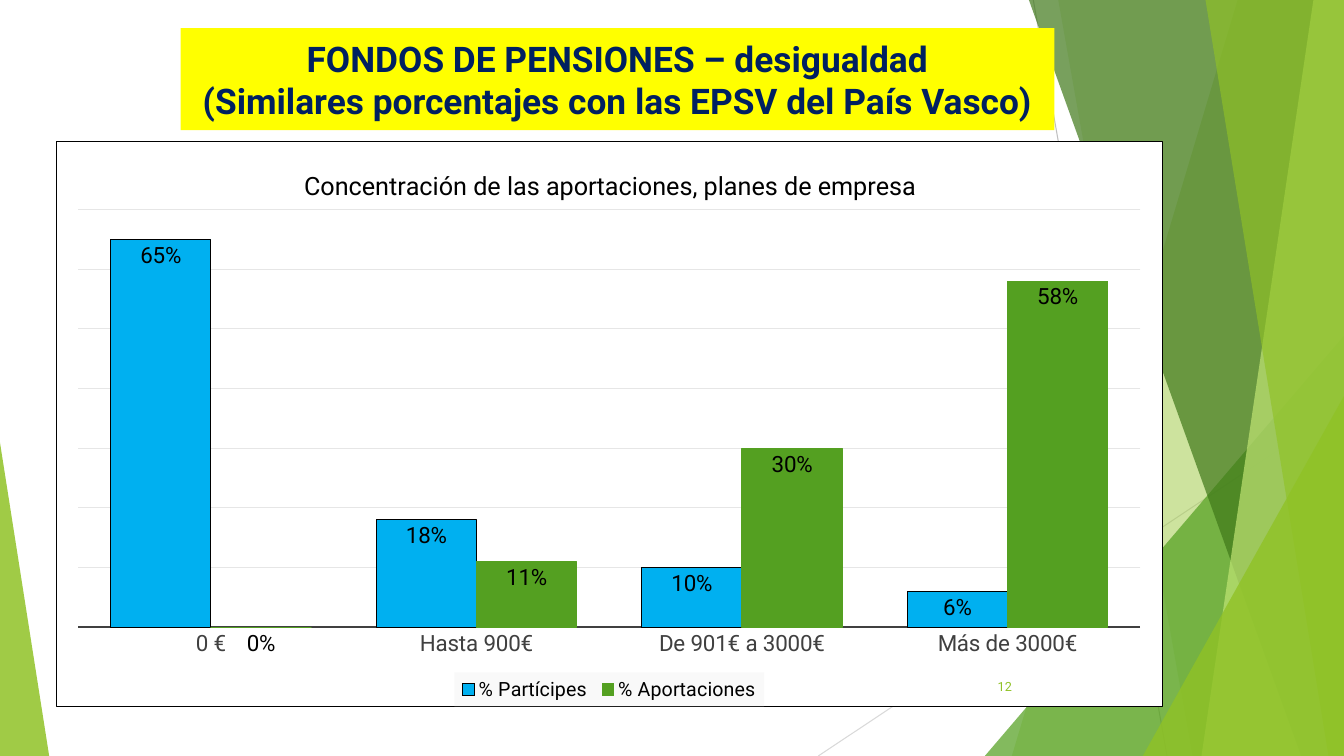
from lxml import etree
from pptx import Presentation
from pptx.chart.data import CategoryChartData
from pptx.dml.color import RGBColor
from pptx.enum.chart import (XL_CHART_TYPE as ChartType, XL_LABEL_POSITION as LabelPosition,
                             XL_LEGEND_POSITION as LegendPosition, XL_TICK_LABEL_POSITION as TickLabels,
                             XL_TICK_MARK as TickMark)
from pptx.enum.shapes import MSO_CONNECTOR as Connector, MSO_SHAPE as Shape
from pptx.enum.text import MSO_ANCHOR as Anchor, PP_ALIGN as Align
from pptx.oxml import parse_xml
from pptx.oxml.ns import nsdecls, qn
from pptx.util import Cm, Pt

WIDTH, HEIGHT = 33.87, 19.05
FONT = "Roboto"
COLORS = {
    "lime": "90C226", "green": "54A021", "forest": "3F7819", "pale": "C0E474",
    "blue": "00B0F0", "navy": "002060", "yellow": "FFFF00", "white": "FFFFFF",
    "black": "000000", "text": "404040", "grid": "E6E6E6", "legend": "F9F9F9",
    "line": "BFBFBF", "light line": "D9D9D9",
}


def rgb(name):
    return RGBColor.from_string(COLORS[name])


def format_font(font, size, color="black", bold=False):
    font.name, font.size, font.bold = FONT, Pt(size), bold
    font.color.rgb = rgb(color)


def write(shape, text, align=Align.LEFT, **font_format):
    frame = shape.text_frame
    frame.word_wrap = True
    frame.vertical_anchor = Anchor.MIDDLE
    para = frame.paragraphs[0]
    para.text = text
    para.alignment = align
    for span in para.runs:
        format_font(span.font, **font_format)


def format_line(line, color, width=0.75):
    line.color.rgb = rgb(color)
    line.width = Pt(width)


def place_chart_part(parent, index, **fractions):
    """Give a chart part a manual layout, in fractions of the chart's size."""
    for old in parent.findall(qn("c:layout")):
        parent.remove(old)
    layout = parse_xml(f"<c:layout {nsdecls('c')}><c:manualLayout/></c:layout>")
    manual = layout[0]
    if index == 0:
        etree.SubElement(manual, qn("c:layoutTarget"), val="inner")
    for axis in "xy":
        etree.SubElement(manual, qn(f"c:{axis}Mode"), val="edge")
    for key, value in fractions.items():
        etree.SubElement(manual, qn(f"c:{key}"), val=str(value))
    parent.insert(index, layout)


def chart_part_fill(fill, border=None):
    """Return the fill and border element of a chart part."""
    line = (f'<a:ln w="{Pt(0.75)}"><a:solidFill><a:srgbClr val="{COLORS[border]}"/></a:solidFill></a:ln>'
            if border else "<a:ln><a:noFill/></a:ln>")
    return parse_xml(f'<c:spPr {nsdecls("c", "a")}><a:solidFill><a:srgbClr val="{COLORS[fill]}"/>'
                     f"</a:solidFill>{line}</c:spPr>")


class SlideBuilder:
    def __init__(self, deck):
        self.page = deck.slides.add_slide(deck.slide_layouts[5])
        self.shapes = self.page.shapes

    def line(self, start, end, color):
        connector = self.shapes.add_connector(
            Connector.STRAIGHT, *(Cm(value) for value in (*start, *end)))
        format_line(connector.line, color)
        etree.SubElement(connector._element.spPr, qn("a:effectLst"))

    def fill_glass(self, shape, color, opacity):
        shape.shadow.inherit = False
        shape.line.fill.background()
        shape.fill.solid()
        shape.fill.fore_color.rgb = rgb(color)
        node = shape._element.spPr.find(f"{qn('a:solidFill')}/{qn('a:srgbClr')}")
        etree.SubElement(node, qn("a:alpha"), val=str(opacity * 1000))

    def facet(self, top, bottom, color, opacity):
        """Draw a full-height pane from a slanted left edge to the slide's right edge."""
        builder = self.shapes.build_freeform(Cm(top), 0)
        corners = ((WIDTH, 0), (WIDTH, HEIGHT), (bottom, HEIGHT))
        builder.add_line_segments([(Cm(x), Cm(y)) for x, y in corners], close=True)
        self.fill_glass(builder.convert_to_shape(), color, opacity)

    def corner(self, left, top, width, apex, color, opacity):
        """Draw a right triangle that stands on the slide's bottom edge."""
        triangle = self.shapes.add_shape(Shape.ISOSCELES_TRIANGLE, Cm(left), Cm(top),
                                         Cm(width), Cm(HEIGHT - top))
        triangle.adjustments[0] = apex
        self.fill_glass(triangle, color, opacity)

    def title(self, text, left, top, width, height):
        title = self.shapes.title
        title.left, title.top, title.width, title.height = map(Cm, (left, top, width, height))
        title.fill.solid()
        title.fill.fore_color.rgb = rgb("yellow")
        write(title, text, Align.CENTER, size=25.2, color="navy", bold=True)
        self.shapes._spTree.append(title._element)

    def text(self, text, left, top, width, height, **text_format):
        box = self.shapes.add_textbox(Cm(left), Cm(top), Cm(width), Cm(height))
        write(box, text, **text_format)

    def column_chart(self, heading, categories, series, left, top, width, height):
        """Draw clustered columns; series holds name, values, fill and line colour."""
        data = CategoryChartData(number_format="0%")
        data.categories = categories
        for name, values, _, _ in series:
            data.add_series(name, values)
        chart = self.shapes.add_chart(ChartType.COLUMN_CLUSTERED, Cm(left), Cm(top),
                                      Cm(width), Cm(height), data).chart
        format_font(chart.font, 10)
        chart._chartSpace.chart.addnext(chart_part_fill("white", "black"))

        chart.has_title = True
        para = chart.chart_title.text_frame.paragraphs[0]
        span = para.add_run()
        span.text = heading
        format_font(span.font, 18)
        place_chart_part(chart.chart_title._element, 1, x=0.22, y=0.04)

        plot = chart.plots[0]
        plot.gap_width, plot.overlap, plot.vary_by_categories = 65, 0, False
        for column, (_, _, fill, line) in zip(plot.series, series):
            column.invert_if_negative = False
            column.format.fill.solid()
            column.format.fill.fore_color.rgb = rgb(fill)
            format_line(column.format.line, line)
            labels = column.data_labels
            labels.show_value = True
            labels.position = LabelPosition.INSIDE_END
            labels.number_format, labels.number_format_is_linked = "0%", False
            format_font(labels.font, 16)
        place_chart_part(chart._chartSpace.chart.plotArea, 0, x=0.02, y=0.12, w=0.96, h=0.74)

        category_axis = chart.category_axis
        category_axis.major_tick_mark = TickMark.NONE
        format_font(category_axis.tick_labels.font, 16, "text")
        format_line(category_axis.format.line, "text", 1.5)
        value_axis = chart.value_axis
        value_axis.minimum_scale, value_axis.maximum_scale, value_axis.major_unit = 0, 0.7, 0.1
        value_axis.major_tick_mark = TickMark.NONE
        value_axis.tick_label_position = TickLabels.NONE
        value_axis.format.line.fill.background()
        format_line(value_axis.major_gridlines.format.line, "grid")

        chart.has_legend = True
        legend = chart.legend
        legend.position, legend.include_in_layout = LegendPosition.BOTTOM, False
        format_font(legend.font, 14)
        place_chart_part(legend._element, 1, x=0.36, y=0.94, w=0.28, h=0.06)
        legend._element.find(qn("c:overlay")).addnext(chart_part_fill("legend"))


def main():
    deck = Presentation()
    deck.slide_width, deck.slide_height = Cm(WIDTH), Cm(HEIGHT)
    slide = SlideBuilder(deck)

    slide.line((26.04, 0), (29.41, HEIGHT), "line")
    slide.line((WIDTH, 10.24), (20.62, HEIGHT), "light line")
    slide.facet(31.19, 25.5, "lime", 30)
    slide.facet(26.67, 30.05, "lime", 20)
    slide.corner(24.82, 8.46, 9.05, 1, "green", 72)
    slide.facet(25.93, 32.79, "forest", 70)
    slide.facet(33.1, 30.28, "pale", 70)
    slide.facet(30.38, 33.48, "lime", 65)
    slide.corner(28.8, 9.98, 5.07, 1, "lime", 80)
    slide.corner(0, 11.15, 1.24, 0, "lime", 85)

    slide.title("FONDOS DE PENSIONES – desigualdad\v(Similares porcentajes con las EPSV del País Vasco)",
                4.55, 0.71, 22.02, 2.57)
    slide.column_chart(
        "Concentración de las aportaciones, planes de empresa",
        ["0 €", "Hasta 900€", "De 901€ a 3000€", "Más de 3000€"],
        [("% Partícipes", (0.65, 0.18, 0.1, 0.06), "blue", "black"),
         ("% Aportaciones", (0, 0.11, 0.3, 0.58), "green", "green")],
        1.4, 3.56, 27.91, 14.25)
    slide.text("12", 23.85, 16.79, 1.9, 1.02, align=Align.RIGHT, size=9, color="lime")
    deck.save("out.pptx")


if __name__ == "__main__":
    main()
